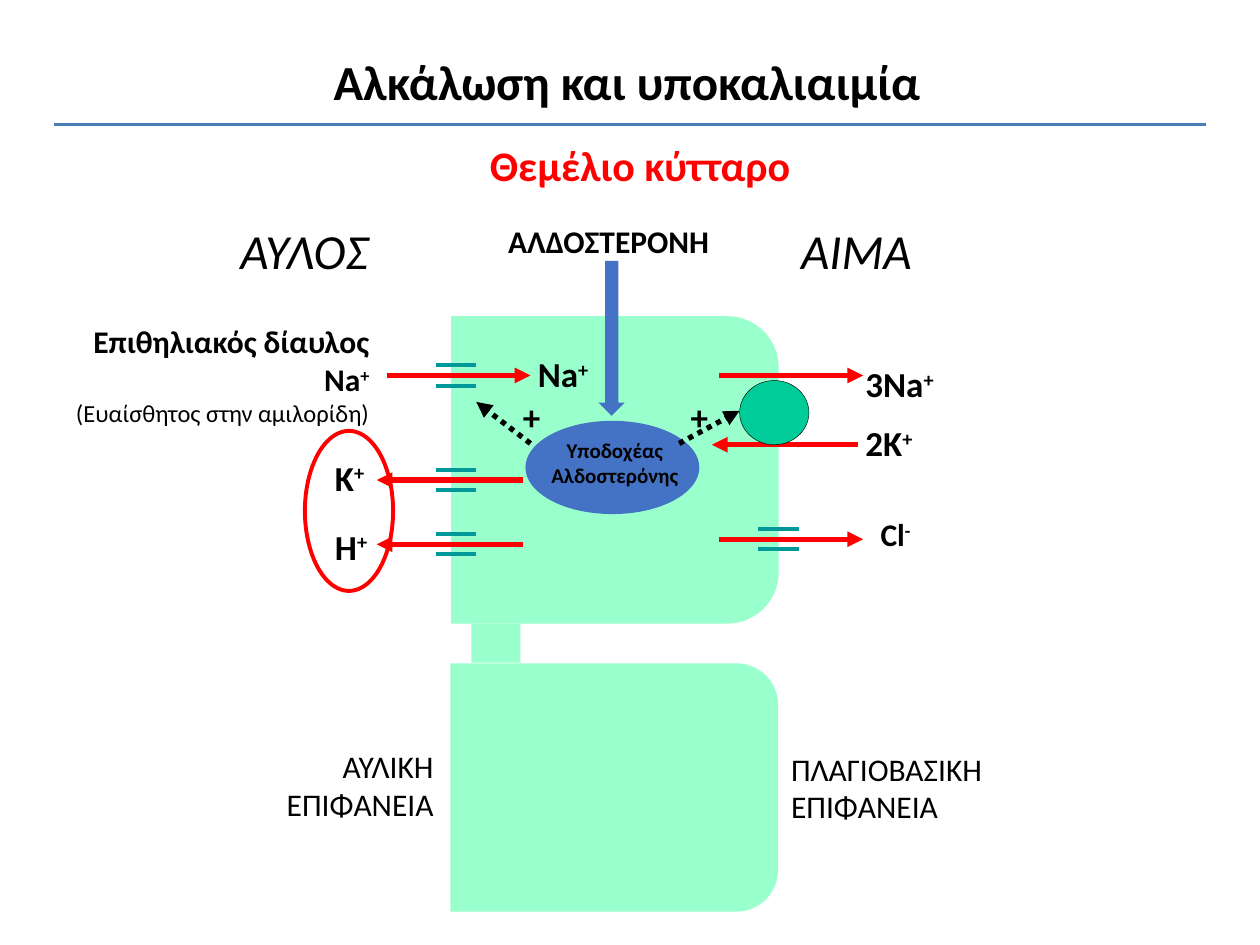
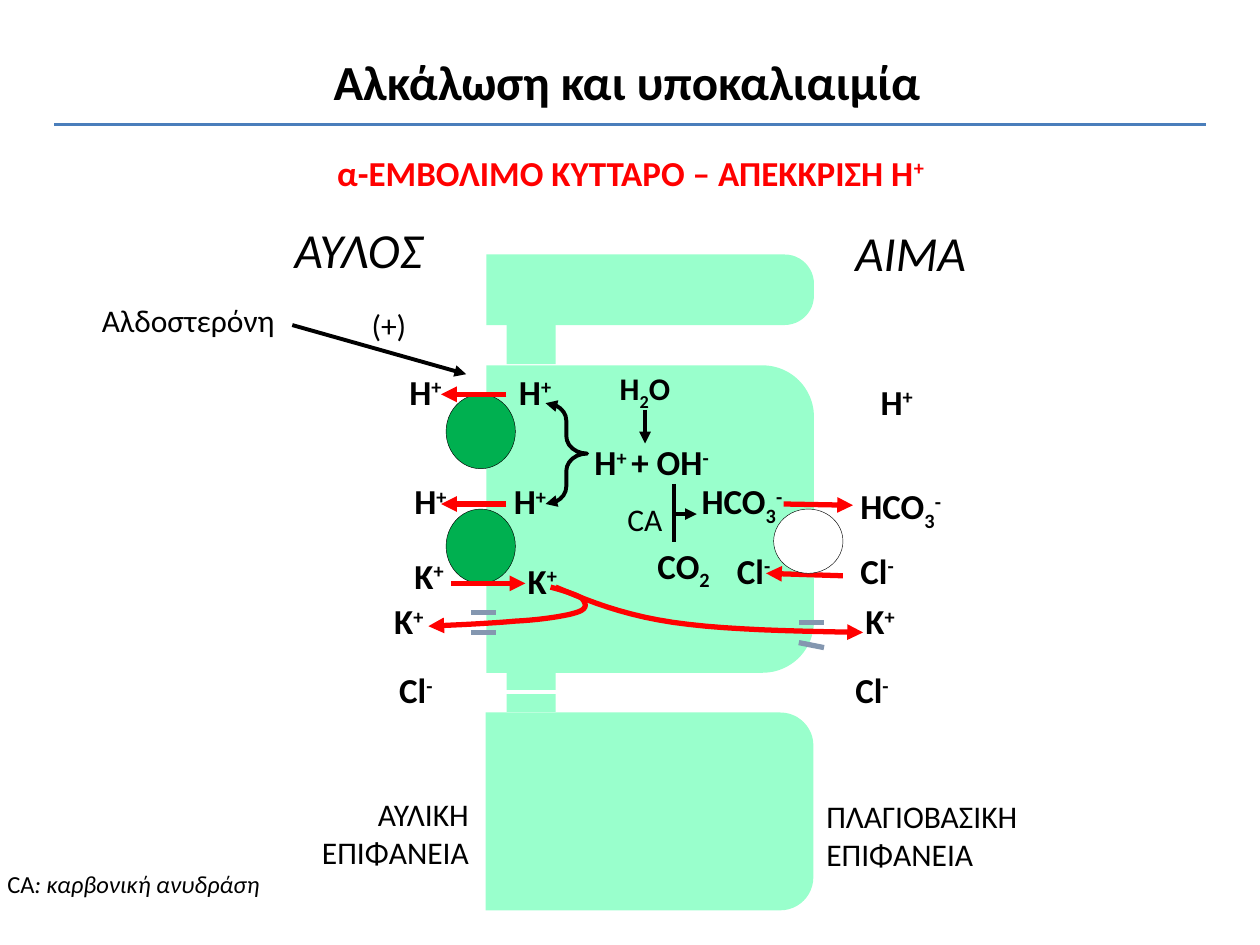
import pptx
import pptx.util
import pptx.dml.color
import pptx.enum.dml
import pptx.enum.shapes
import pptx.enum.text
import pptx.oxml
import pptx.oxml.ns

PX = 9144  # EMU in one px, 100 px to the inch
FONT = "Calibri"
COLORS = {
    "black": "000000", "white": "FFFFFF", "red": "FF0000", "rule": "4A7EBB",
    "cell": "99FFCC", "pump": "00CC99", "proton_pump": "00B050",
    "channel": "009999", "k_channel": "8497B0", "receptor": "4472C4",
}
MSO = pptx.enum.shapes.MSO_SHAPE
STRAIGHT = pptx.enum.shapes.MSO_CONNECTOR.STRAIGHT
ALIGN = {"l": pptx.enum.text.PP_ALIGN.LEFT, "c": pptx.enum.text.PP_ALIGN.CENTER,
         "r": pptx.enum.text.PP_ALIGN.RIGHT}
RGB = pptx.dml.color.RGBColor.from_string


def write(tf, text, size, color="black", bold=False, italic=False, align="l"):
    """Fill the last paragraph; '|' parts runs, '^' raises one and '_' lowers it."""
    tf.word_wrap = True
    p = tf.paragraphs[-1]
    p.alignment = ALIGN[align]
    p.font.name, p.font.size = FONT, pptx.util.Pt(size)
    p.font.bold, p.font.italic = bold, italic
    p.font.color.rgb = RGB(COLORS[color])
    for part in text.split("|"):
        r = p.add_run()
        r.text = part.lstrip("^_")
        if part[0] in "^_":
            r._r.get_or_add_rPr().set("baseline", "30000" if part[0] == "^" else "-25000")


def stroke(shape, color, width, ends=(), dash=None):
    """Style an outline, with a triangle on each of the named ends."""
    shape.line.color.rgb = RGB(COLORS[color])
    shape.line.width = pptx.util.Pt(width)
    if dash:
        shape.line.dash_style = dash
    spPr = shape._element.spPr
    ln = spPr.find(pptx.oxml.ns.qn("a:ln"))
    for end in ends:
        ln.append(pptx.oxml.parse_xml(
            f'<a:{end} {pptx.oxml.ns.nsdecls("a")} type="triangle"/>'))
    spPr.append(pptx.oxml.parse_xml(f'<a:effectLst {pptx.oxml.ns.nsdecls("a")}/>'))


TAIL = ("tailEnd",)
DOTTED = pptx.enum.dml.MSO_LINE.ROUND_DOT

prs = pptx.Presentation()
prs.slide_width, prs.slide_height = 1000 * PX, 750 * PX

# Content of each slide: boxes are x, y, w, h and lines are x1, y1, x2, y2
cell_slide = {
    "cells": [(358, 251, 260, 244, 0.167), (358, 526, 260, 197, 0.167)],
    "necks": [(374, 495, 39, 31)],
    "back_ellipses": [],
    "lines": [
        ((571, 428, 685, 428), "red", 3, TAIL, None),
        ((571, 298, 685, 298), "red", 3, TAIL, None),
        ((681, 353, 565, 353), "red", 3, TAIL, None),
        ((307, 298, 421, 298), "red", 3, TAIL, None),
        ((415, 432, 299, 432), "red", 3, TAIL, None),
        ((415, 381, 299, 381), "red", 3, TAIL, None),
    ],
    "curves": [],
    "front_ellipses": [
        ((587, 302, 55, 51), "pump", "black", 0.25),
        ((417, 334, 138, 74), "receptor", None, 0),
        ((242, 342, 70, 127), None, "red", 2.25),
    ],
    "front_lines": [
        ((539, 352, 587, 326), "black", 3, TAIL, DOTTED),
        ((421, 352, 378, 319), "black", 3, TAIL, DOTTED),
    ],
    "headings": [((181, 170, 169, 57), "ΑΥΛΟΣ"), ((626, 170, 134, 57), "ΑΙΜΑ")],
    "surfaces": [((185, 588, 169, 71), "ΑΥΛΙΚΗ ΕΠΙΦΑΝΕΙΑ", "r"),
                 ((618, 590, 185, 71), "ΠΛΑΓΙΟΒΑΣΙΚΗ ΕΠΙΦΑΝΕΙΑ", "l")],
    "ions": [
        (677, 330, "2K|^+"), (677, 283, "3Na|^+"), (417, 275, "Na|^+"),
        (256, 412, "H|^+"), (256, 357, "Κ|^+"), (402, 309, "+"), (535, 309, "+"),
    ],
    "subtitle": ((138, 106, 740, 50), "Θεμέλιο κύτταρο", 24),
}
# A channel is a pair of short bars above and below its ion arrow
for x, y in [(602, 428), (346, 298), (346, 381), (346, 432)]:
    for bar_y in (y - 8, y + 8):
        cell_slide["lines"].append(((x, bar_y, x + 32, bar_y), "channel", 2.25, (), None))

intercalated_slide = {
    "cells": [(386, 290, 260, 244, 0.167), (386, 202, 260, 56, 0.416),
              (386, 565, 260, 157, 0.167)],
    "necks": [(402, 254, 39, 35), (402, 534, 39, 31)],
    "back_ellipses": [((354, y, 55, 59), "proton_pump", "black", 0.25) for y in (313, 404)],
    "lines": [
        ((622, 400, 677, 401), "red", 3, TAIL, None),
        ((669, 457, 608, 455), "red", 3, TAIL, None),
        ((358, 463, 417, 463), "red", 3, TAIL, None),
        ((402, 400, 350, 400), "red", 3, TAIL, None),
        ((402, 313, 350, 313), "red", 3, TAIL, None),
        ((512, 325, 512, 352), "black", 2.25, TAIL, None),
        ((535, 384, 535, 430), "black", 2.25, (), None),
        ((535, 408, 553, 408), "black", 2.25, TAIL, None),
        ((232, 258, 370, 297), "black", 2.25, TAIL, None),
        ((374, 486, 394, 486), "k_channel", 3, (), None),
        ((374, 502, 394, 502), "k_channel", 3, (), None),
        ((634, 494, 654, 494), "k_channel", 3, (), None),
        ((634, 510, 654, 514), "k_channel", 3, (), None),
        ((669, 549, 352, 549), "white", 2.25, TAIL, None),
    ],
    "curves": [
        [(437, 466), (448, 469), (458, 472), (462, 475), (465, 479), (467, 483), (458, 486),
         (449, 489), (429, 492), (409, 493), (389, 495), (340, 497), (340, 497)],
        [(441, 466), (467, 477), (494, 488), (534, 494), (575, 500), (630, 501), (685, 502)],
    ],
    "front_ellipses": [((614, 404, 55, 51), "white", "black", 0.25)],
    "front_lines": [],
    "headings": [((224, 169, 169, 57), "ΑΥΛΟΣ"), ((669, 172, 134, 57), "ΑΙΜΑ")],
    "surfaces": [((213, 626, 169, 71), "ΑΥΛΙΚΗ ΕΠΙΦΑΝΕΙΑ", "r"),
                 ((646, 628, 185, 71), "ΠΛΑΓΙΟΒΑΣΙΚΗ ΕΠΙΦΑΝΕΙΑ", "l")],
    "ions": [
        (689, 297, "Η|^+"), (315, 289, "Η|^+"), (402, 289, "Η|^+"),
        (319, 376, "Η|^+"), (398, 376, "Η|^+"), (319, 435, "Κ|^+"),
        (409, 439, "Κ|^+"), (303, 471, "Κ|^+"), (677, 471, "Κ|^+"),
        (673, 431, "Cl|^-"), (575, 431, "Cl|^-"), (669, 526, "Cl|^-"), (307, 526, "Cl|^-"),
        (512, 427, "CO|_2"), (462, 345, "H|^+ |+ OH|^-"),
        (547, 376, "HCO|_3|^-"), (673, 380, "HCO|_3|^-"),
    ],
    "subtitle": ((240, 115, 521, 44), "α-ΕΜΒΟΛΙΜΟ ΚΥΤΤΑΡΟ – ΑΠΕΚΚΡΙΣΗ H|^+", 20),
}

slides = []
for content in (cell_slide, intercalated_slide):
    s = prs.slides.add_slide(prs.slide_layouts[5])
    slides.append(s)

    # Title and the rule under it
    title = s.shapes.title
    title.left, title.top, title.width, title.height = [v * PX for v in (39, 36, 917, 57)]
    title.text_frame.vertical_anchor = pptx.enum.text.MSO_ANCHOR.TOP
    title.text_frame.auto_size = pptx.enum.text.MSO_AUTO_SIZE.NONE
    write(title.text_frame, "Αλκάλωση και υποκαλιαιμία", 28, bold=True, align="c")
    rule = s.shapes.add_connector(STRAIGHT, 43 * PX, 99 * PX, 957 * PX, 99 * PX)
    stroke(rule, "rule", 1.5)

    # Cells, rounded on the blood side, and the necks between them
    bodies = []
    for x, y, w, h, radius in content["cells"]:
        turn = (w - h) // 2
        sp = s.shapes.add_shape(MSO.ROUND_2_SAME_RECTANGLE,
                                (x + turn) * PX, (y - turn) * PX, h * PX, w * PX)
        sp.rotation = 90
        sp.adjustments[0] = radius
        bodies.append(sp)
    for neck in content["necks"]:
        bodies.append(s.shapes.add_shape(MSO.RECTANGLE, *[v * PX for v in neck]))
    for sp in bodies:
        sp.shadow.inherit = False
        sp.fill.solid()
        sp.fill.fore_color.rgb = RGB(COLORS["cell"])
        sp.line.fill.background()

    # Pumps, receptor and ion arrows, from back to front
    for layer in ("back_ellipses", "lines", "front_ellipses", "front_lines"):
        for box, color, *style in content[layer]:
            box = [v * PX for v in box]
            if layer.endswith("lines"):
                stroke(s.shapes.add_connector(STRAIGHT, *box), color, *style)
                continue
            sp = s.shapes.add_shape(MSO.OVAL, *box)
            if color:
                sp.fill.solid()
                sp.fill.fore_color.rgb = RGB(COLORS[color])
            else:
                sp.fill.background()
            if style[0]:
                stroke(sp, *style)
            else:
                sp.shadow.inherit = False
                sp.line.fill.background()

    # Curved arrows: cubic Bézier pieces drawn as short segments
    for pts in content["curves"]:
        points = []
        for i in range(0, len(pts) - 1, 3):
            a, b, c, d = pts[i:i + 4]
            for t in [k / 10 for k in range(1, 11)]:
                u = 1 - t
                points.append([(u**3 * a[j] + 3 * u * u * t * b[j] + 3 * u * t * t * c[j]
                                + t**3 * d[j]) * PX for j in (0, 1)])
        fb = s.shapes.build_freeform(pts[0][0] * PX, pts[0][1] * PX)
        fb.add_line_segments(points, close=False)
        curve = fb.convert_to_shape()
        curve.fill.background()
        stroke(curve, "red", 3, TAIL)

    # Labels that both slides share
    labels = [(box, text, 28, "black", False, True) for box, text in content["headings"]]
    labels += [(box, text, 18, "black", False, False, align)
               for box, text, align in content["surfaces"]]
    labels += [((x, y, 40 if text == "+" else 113, 44), text, 20, "black", True, False,
                "c" if text == "+" else "l") for x, y, text in content["ions"]]
    box, text, size = content["subtitle"]
    labels.append((box, text, size, "red", True, False, "c"))
    for box, *style in labels:
        write(s.shapes.add_textbox(*[v * PX for v in box]).text_frame, *style)

# Slide 1: aldosterone arrow and labels
s = slides[0]
arrow = s.shapes.add_shape(MSO.DOWN_ARROW, 475 * PX, 207 * PX, 21 * PX, 123 * PX)
arrow.shadow.inherit = False
arrow.fill.solid()
arrow.fill.fore_color.rgb = RGB(COLORS["receptor"])
arrow.line.fill.background()
for box, *style in [
    ((372, 171, 222, 40), "ΑΛΔΟΣΤΕΡΟΝΗ", 18, "black", True, False, "c"),
    ((413, 342, 150, 50), "Υποδοχέας Αλδοστερόνης", 12, "black", True, False, "c"),
    ((689, 404, 142, 40), "Cl|^-", 18, "black", True),
]:
    write(s.shapes.add_textbox(*[v * PX for v in box]).text_frame, *style)
tf = s.shapes.add_textbox(35 * PX, 251 * PX, 268 * PX, 94 * PX).text_frame
write(tf, "Επιθηλιακός δίαυλος Na|^+", 18, bold=True, align="r")
tf.add_paragraph()
write(tf, "(Ευαίσθητος στην αμιλορίδη)", 14, align="r")

# Slide 2: brace and labels
s = slides[1]
brace = s.shapes.add_shape(MSO.RIGHT_BRACE, 433 * PX, 320 * PX, 33 * PX, 80 * PX)
brace.adjustments[0] = 0.42
brace.fill.background()
stroke(brace, "black", 2.25, ("headEnd", "tailEnd"))
for box, *style in [
    ((482, 288, 70, 40), "H|_2|O", 18, "black", True),
    ((488, 392, 55, 40), "CA", 18),
    ((71, 234, 173, 40), "Αλδοστερόνη", 18),
    ((285, 238, 61, 40), "(+)", 18),
    ((-4, 685, 280, 34), "CA|: καρβονική ανυδράση", 14),
]:
    tf = s.shapes.add_textbox(*[v * PX for v in box]).text_frame
    write(tf, *style)
tf.paragraphs[0].runs[1].font.italic = True

prs.save("out.pptx")
